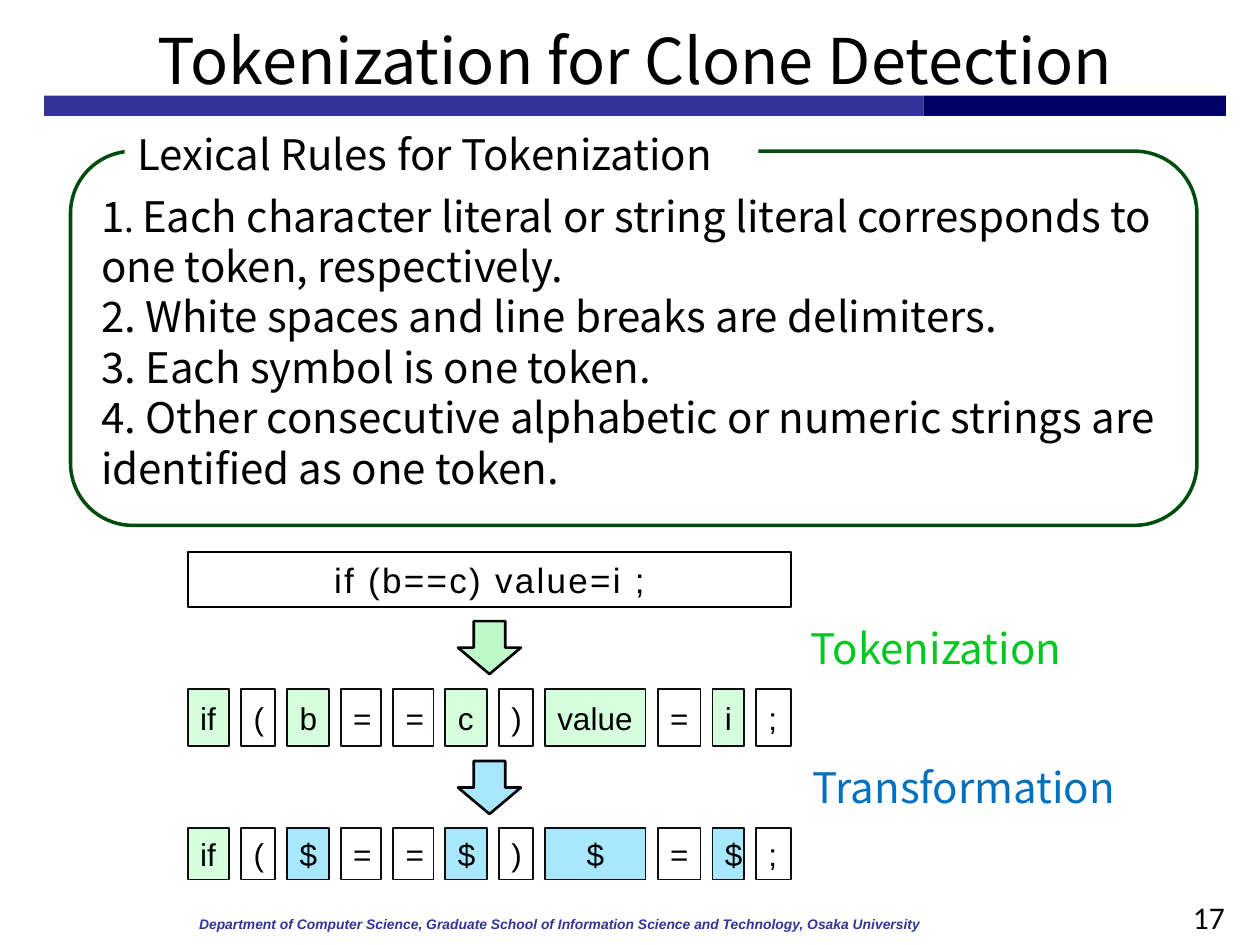
import pptx
import pptx.util
import pptx.dml.color
import pptx.enum.shapes
import pptx.enum.text

Inches = pptx.util.Inches
Pt = pptx.util.Pt
SHAPE = pptx.enum.shapes.MSO_SHAPE
ALIGN = pptx.enum.text.PP_ALIGN
ANCHOR = pptx.enum.text.MSO_ANCHOR

THEME = {
    "heading": "Noto Sans CJK JP", "code": "Arial", "number": "Calibri",
    "black": "000000", "white": "FFFFFF", "edge": "0D0D0D",
    "bar": "333399", "bar_end": "000066", "frame": "004C0D",
    "green": "D5FFDC", "blue": "A7E8FF", "green_arrow": "BEFAC9",
    "green_text": "00C821", "blue_text": "0070C0",
    "title_size": 36, "body_size": 24, "code_size": 20,
    "token_size": 18, "footer_size": 7.9,
}

TITLE = "Tokenization for Clone Detection"
FOOTER = ("Department of Computer Science, Graduate School of Information "
          "Science and Technology, Osaka University")
PAGE_NUMBER = "17"
RULES_LABEL = "Lexical Rules for Tokenization"
RULES = [
    [("1", "body_size"), (". ", "code_size"),
     ("Each character literal or string literal corresponds to one token, "
      "respectively.", "body_size")],
    [("2. White spaces and line breaks are delimiters.", "body_size")],
    [("3. Each symbol is one token.", "body_size")],
    [("4. Other consecutive alphabetic or numeric strings are identified "
      "as one token.", "body_size")],
]
STATEMENT = "if (b==c) value=i ;"
TOKENS = ["if", "(", "b", "=", "=", "c", ")", "value", "=", "i", ";"]
TOKEN_WIDTHS = [0.33, 0.27, 0.33, 0.32, 0.32, 0.33, 0.27, 0.8, 0.34, 0.25, 0.28]
KEYWORDS = {"if"}
IDENTIFIERS = {"b", "c", "value", "i"}
CENTERED_WHEN_REPLACED = {"value", "i"}
STEPS = [
    ("Tokenization", "green_text", "green_arrow", 4.93, (6.28, 4.89, 2.3, 0.5)),
    ("Transformation", "blue_text", "blue", 6.04, (6.28, 5.99, 2.74, 0.51)),
]
FLOW_LEFT, FLOW_WIDTH = 1.49, 4.79


def color(name):
    return pptx.dml.color.RGBColor.from_string(THEME[name])


def set_font(font, face, size, ink="black"):
    font.name = THEME[face]
    font.size = Pt(THEME[size])
    font.color.rgb = color(ink)


def set_frame(frame, anchor=ANCHOR.MIDDLE, wrap=True, margins=(0.1, 0.05, 0.1, 0.05)):
    frame.word_wrap = wrap
    frame.vertical_anchor = anchor
    (frame.margin_left, frame.margin_top,
     frame.margin_right, frame.margin_bottom) = map(Inches, margins)


def write(frame, text, face, size, ink="black", align=ALIGN.LEFT):
    para = frame.paragraphs[0]
    para.text = text
    para.alignment = align
    set_font(para.font, face, size, ink)
    return para


def add_shape(page, kind, place, fill=None, line=None, weight=1):
    shape = page.shapes.add_shape(kind, *map(Inches, place))
    shape.shadow.inherit = False
    if fill:
        shape.fill.solid()
        shape.fill.fore_color.rgb = color(fill)
    else:
        shape.fill.background()
    if line:
        shape.line.color.rgb = color(line)
        shape.line.width = Pt(weight)
    else:
        shape.line.fill.background()
    return shape


def add_text(page, place, text, face, size, ink="black", align=ALIGN.LEFT, **frame_options):
    box = page.shapes.add_textbox(*map(Inches, place))
    set_frame(box.text_frame, **frame_options)
    return write(box.text_frame, text, face, size, ink, align)


def add_header_and_footer(page):
    add_shape(page, SHAPE.RECTANGLE, (0.35, 0.76, 6.98, 0.16), "bar")
    add_shape(page, SHAPE.RECTANGLE, (7.33, 0.76, 2.4, 0.16), "bar_end")
    title = page.shapes.title
    title.left, title.top, title.width, title.height = map(Inches, (0.35, 0.13, 9.38, 0.63))
    set_frame(title.text_frame, margins=(0.1, 0.05, 0.1, 0))
    title.text_frame.auto_size = pptx.enum.text.MSO_AUTO_SIZE.NONE
    write(title.text_frame, TITLE, "heading", "title_size", align=ALIGN.CENTER)
    footer = add_text(page, (1.51, 7.23, 7.52, 0.24), FOOTER, "code", "footer_size", "bar",
                      anchor=ANCHOR.TOP, margins=(0.07, 0.04, 0.07, 0.04))
    footer.font.bold = footer.font.italic = True
    add_text(page, (9.19, 7.08, 0.63, 0.29), PAGE_NUMBER, "number", "token_size",
             align=ALIGN.RIGHT, anchor=ANCHOR.TOP)


def add_rules(page):
    panel = add_shape(page, SHAPE.ROUNDED_RECTANGLE, (0.56, 1.2, 8.94, 2.97),
                      "white", "frame", 2)
    frame = panel.text_frame
    set_frame(frame, margins=(0.1, 0.05, 0.1, 0))
    for index, rule in enumerate(RULES):
        para = frame.add_paragraph() if index else frame.paragraphs[0]
        para.alignment = ALIGN.LEFT
        for text, size in rule:
            span = para.add_run()
            span.text = text
            set_font(span.font, "heading", size)
    label = add_shape(page, SHAPE.RECTANGLE, (0.99, 0.97, 5.03, 0.5), "white")
    set_frame(label.text_frame, ANCHOR.TOP)
    write(label.text_frame, RULES_LABEL, "heading", "body_size")


def add_token_row(page, top, height, replaced):
    gap = (FLOW_WIDTH - sum(TOKEN_WIDTHS)) / (len(TOKENS) - 1)
    left = FLOW_LEFT
    for token, width in zip(TOKENS, TOKEN_WIDTHS):
        swap = replaced and token in IDENTIFIERS
        text = "$" if swap else token
        if swap:
            fill = "blue"
        else:
            fill = "green" if token in KEYWORDS | IDENTIFIERS else "white"
        centered = swap and token in CENTERED_WHEN_REPLACED
        cell = add_shape(page, SHAPE.RECTANGLE, (left, top, width, height), fill, "edge")
        set_frame(cell.text_frame, wrap=len(text) == 1)
        write(cell.text_frame, text, "code", "token_size",
              align=ALIGN.CENTER if centered else ALIGN.LEFT)
        left += width + gap


def add_flow(page):
    statement = add_shape(page, SHAPE.RECTANGLE, (FLOW_LEFT, 4.38, FLOW_WIDTH, 0.44),
                          line="black")
    set_frame(statement.text_frame)
    para = write(statement.text_frame, STATEMENT, "code", "code_size", align=ALIGN.CENTER)
    para.runs[0].font._element.set("spc", "130")
    add_token_row(page, 5.47, 0.45, replaced=False)
    add_token_row(page, 6.57, 0.41, replaced=True)
    arrow_width = 0.5
    arrow_left = FLOW_LEFT + (FLOW_WIDTH - arrow_width) / 2
    for text, ink, fill, top, place in STEPS:
        add_shape(page, SHAPE.DOWN_ARROW, (arrow_left, top, arrow_width, 0.42),
                  fill, "black", 1.5)
        add_text(page, place, text, "heading", "body_size", ink, ALIGN.CENTER)


def main():
    deck = pptx.Presentation()
    deck.slide_width, deck.slide_height = Inches(10), Inches(7.5)
    page = deck.slides.add_slide(deck.slide_layouts[5])
    add_header_and_footer(page)
    add_rules(page)
    add_flow(page)
    deck.save("out.pptx")


if __name__ == "__main__":
    main()
